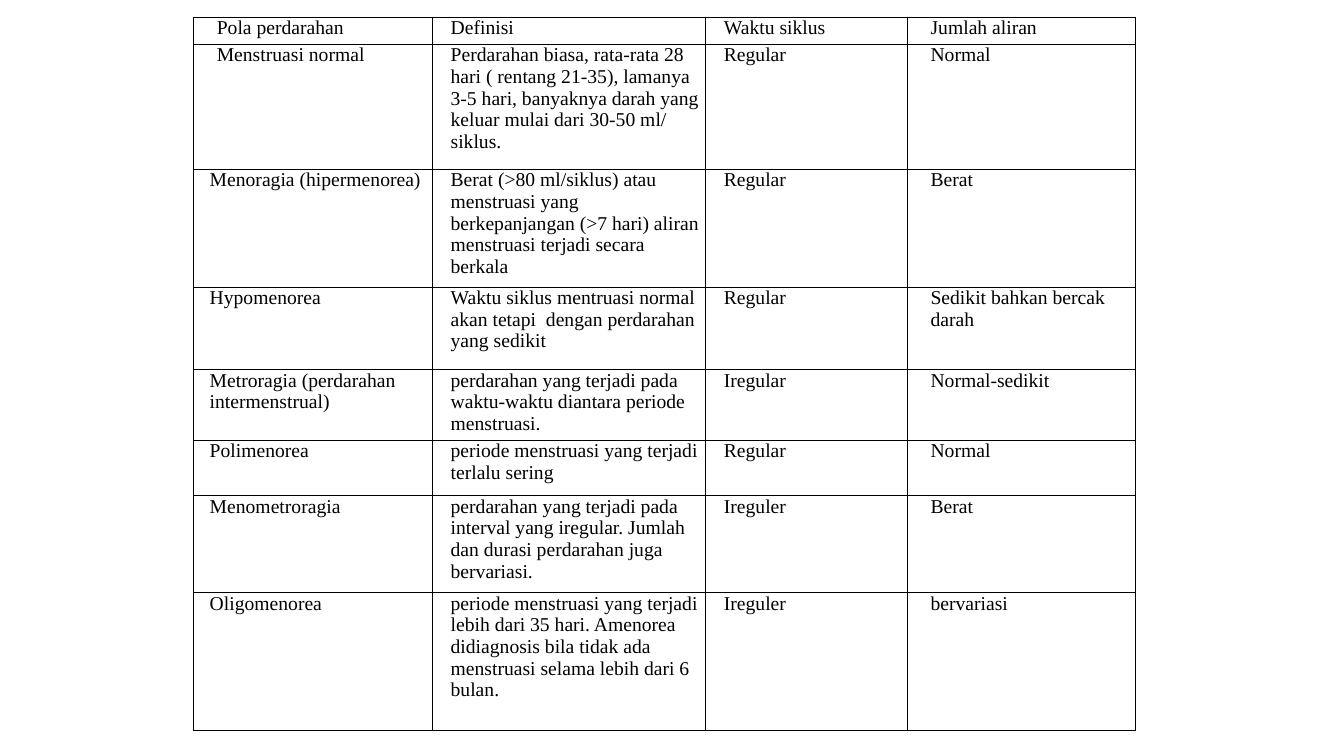
from lxml import etree
from pptx import Presentation
from pptx.dml.color import RGBColor
from pptx.oxml.ns import qn
from pptx.util import Inches, Pt

BLACK = RGBColor(0, 0, 0)
COLUMN_WIDTHS = [2.37, 2.71, 2, 2.26]
ROW_HEIGHTS = [0.27, 1.24, 1.17, 0.82, 0.7, 0.55, 0.96, 1.37]
COLUMN_INDENTS = [0.12, 0.14, 0.14, 0.19]
WIDE_INDENT = 0.19

BLEEDING_PATTERNS = [
    ("Pola perdarahan", "Definisi", "Waktu siklus", "Jumlah aliran"),
    ("Menstruasi normal",
     "Perdarahan biasa, rata-rata 28 hari ( rentang 21-35), lamanya 3-5 hari, "
     "banyaknya darah yang keluar mulai dari 30-50 ml/ siklus.",
     "Regular", "Normal"),
    ("Menoragia (hipermenorea)",
     "Berat (>80 ml/siklus) atau menstruasi yang berkepanjangan (>7 hari) "
     "aliran menstruasi terjadi secara berkala",
     "Regular", "Berat"),
    ("Hypomenorea",
     "Waktu siklus mentruasi normal akan tetapi  dengan perdarahan yang sedikit",
     "Regular", "Sedikit bahkan bercak darah"),
    ("Metroragia (perdarahan intermenstrual)",
     "perdarahan yang terjadi pada waktu-waktu diantara periode menstruasi.",
     "Iregular", "Normal-sedikit"),
    ("Polimenorea", "periode menstruasi yang terjadi terlalu sering",
     "Regular", "Normal"),
    ("Menometroragia",
     "perdarahan yang terjadi pada interval yang iregular. "
     "Jumlah dan durasi perdarahan juga bervariasi.",
     "Ireguler", "Berat"),
    ("Oligomenorea",
     "periode menstruasi yang terjadi lebih dari 35 hari. Amenorea didiagnosis "
     "bila tidak ada menstruasi selama lebih dari 6 bulan.",
     "Ireguler", "bervariasi"),
]


def add_borders(cell):
    properties = cell._tc.get_or_add_tcPr()
    for position, side in enumerate(("lnL", "lnR", "lnT", "lnB")):
        line = etree.Element(qn(f"a:{side}"), w=str(Pt(1)))
        fill = etree.SubElement(line, qn("a:solidFill"))
        etree.SubElement(fill, qn("a:srgbClr"), val=str(BLACK))
        properties.insert(position, line)


presentation = Presentation()
presentation.slide_width = Inches(13.33)
presentation.slide_height = Inches(7.5)
slide = presentation.slides.add_slide(presentation.slide_layouts[6])

table = slide.shapes.add_table(
    len(ROW_HEIGHTS), len(COLUMN_WIDTHS), Inches(1.92), Inches(0.17),
    Inches(sum(COLUMN_WIDTHS)), Inches(sum(ROW_HEIGHTS))).table
table.first_row = False
table.horz_banding = False
for column, width in zip(table.columns, COLUMN_WIDTHS):
    column.width = Inches(width)
for row, height in zip(table.rows, ROW_HEIGHTS):
    row.height = Inches(height)

for row_index, texts in enumerate(BLEEDING_PATTERNS):
    for column_index, text in enumerate(texts):
        cell = table.cell(row_index, column_index)
        cell.margin_left = cell.margin_right = Inches(0.04)
        cell.margin_top = cell.margin_bottom = 0
        cell.fill.background()
        add_borders(cell)

        indent = COLUMN_INDENTS[column_index]
        if column_index == 0 and row_index < 2:
            indent = WIDE_INDENT
        paragraph = cell.text_frame.paragraphs[0]
        paragraph_properties = paragraph._p.get_or_add_pPr()
        paragraph_properties.set("marL", str(Inches(indent)))
        paragraph_properties.set("indent", "0")
        run = paragraph.add_run()
        run.text = text
        run.font.name = "Times New Roman"
        run.font.size = Pt(14)
        run.font.color.rgb = BLACK

presentation.save("out.pptx")
